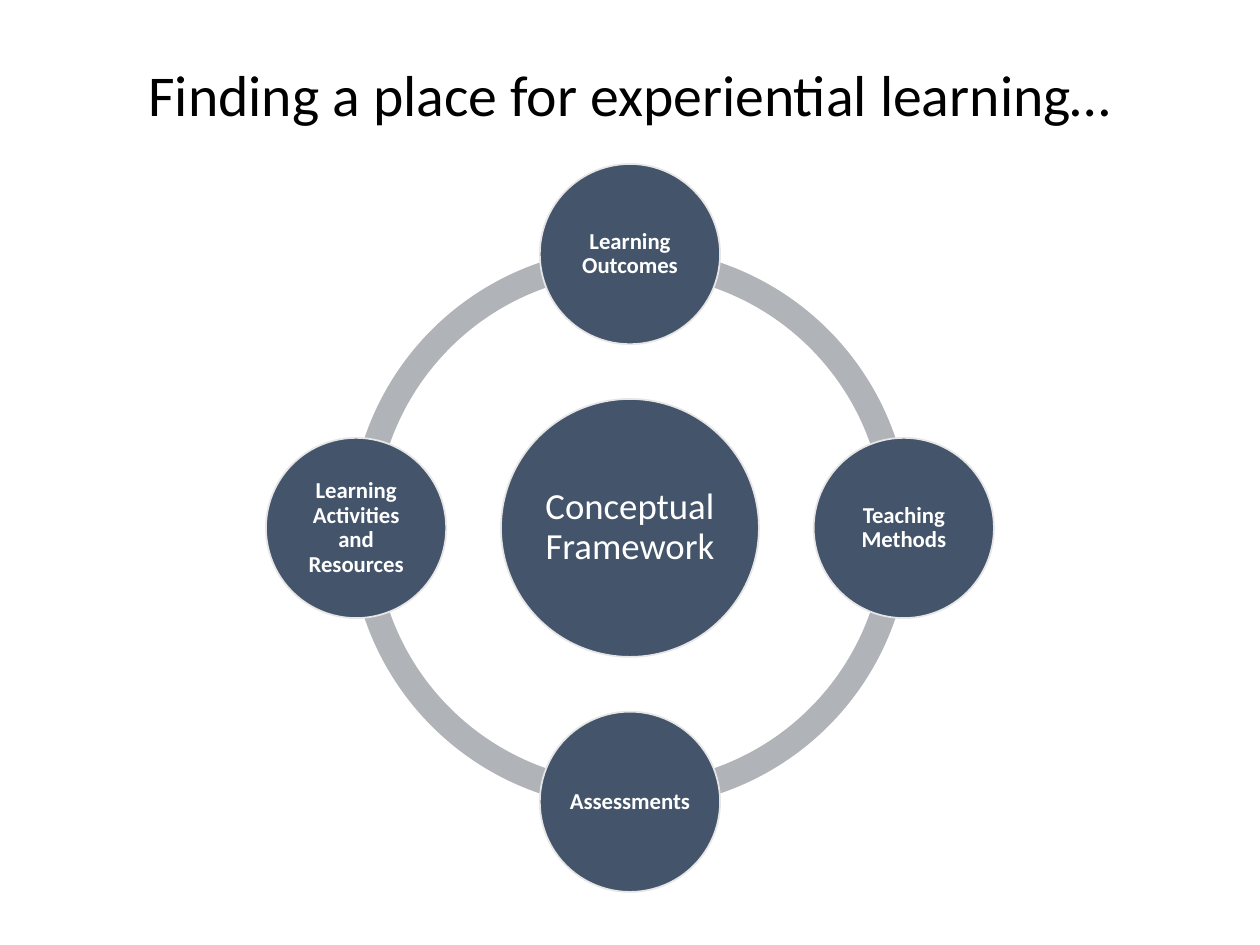
from math import cos, radians, sin

from pptx import Presentation
from pptx.dml.color import RGBColor
from pptx.enum.shapes import MSO_SHAPE
from pptx.enum.text import MSO_ANCHOR, MSO_AUTO_SIZE, PP_ALIGN
from pptx.util import Pt

COLORS = {
    "title": "000000",
    "ring": "B0B4B9",
    "circle": "44546A",
    "outline": "E7E6E6",
    "label": "FFFFFF",
}
FONT = "Calibri"
STEPS = [
    ("Learning Outcomes", -90),
    ("Teaching Methods", 0),
    ("Assessments", 90),
    ("Learning Activities and Resources", 180),
]


def color(name):
    return RGBColor.from_string(COLORS[name])


def write_text(frame, text, size, color_name, bold=False):
    frame.word_wrap = True
    frame.auto_size = MSO_AUTO_SIZE.NONE
    frame.vertical_anchor = MSO_ANCHOR.MIDDLE
    para = frame.paragraphs[0]
    para.alignment = PP_ALIGN.CENTER
    para.line_spacing = 0.9
    span = para.add_run()
    span.text = text
    span.font.name = FONT
    span.font.size = Pt(size)
    span.font.bold = bold
    span.font.color.rgb = color(color_name)


def add_title(page, left, top, width, height):
    title = page.shapes.title
    title.left, title.top = Pt(left), Pt(top)
    title.width, title.height = Pt(width), Pt(height)
    write_text(title.text_frame, "Finding a place for experiential learning…", 33, "title")


def add_centered(group, kind, center_x, center_y, diameter, fill):
    shape = group.shapes.add_shape(
        kind,
        Pt(center_x - diameter / 2),
        Pt(center_y - diameter / 2),
        Pt(diameter),
        Pt(diameter),
    )
    shape.shadow.inherit = False
    shape.fill.solid()
    shape.fill.fore_color.rgb = color(fill)
    return shape


def add_circle(group, center_x, center_y, diameter, text, size, inset, bold=False):
    circle = add_centered(group, MSO_SHAPE.OVAL, center_x, center_y, diameter, "circle")
    circle.line.color.rgb = color("outline")
    circle.line.width = Pt(1)
    frame = circle.text_frame
    frame.margin_left = frame.margin_right = Pt(inset)
    frame.margin_top = frame.margin_bottom = Pt(inset)
    write_text(frame, text, size, "label", bold)


def add_cycle(page, left, top, side):
    group = page.shapes.add_group_shape()
    center_x, center_y = left + side / 2, top + side / 2
    step_size = 103
    orbit = (side - step_size) / 2

    for start, end in [(108, 162), (54, 108), (0, 54), (162, 0)]:
        arc = add_centered(group, MSO_SHAPE.BLOCK_ARC, center_x, center_y, 320.4, "ring")
        arc.line.fill.background()
        arc.adjustments[0] = start
        arc.adjustments[1] = end
        arc.adjustments[2] = 0.046

    add_circle(group, center_x, center_y, 147.4, "Conceptual Framework", 21, 2)
    for text, degrees in STEPS:
        angle = radians(degrees)
        add_circle(
            group,
            center_x + orbit * cos(angle),
            center_y + orbit * sin(angle),
            step_size,
            text,
            13,
            1.3,
            bold=True,
        )


def main():
    deck = Presentation()
    deck.slide_width, deck.slide_height = Pt(720), Pt(540)
    page = deck.slides.add_slide(deck.slide_layouts[5])
    add_title(page, 49.5, 28.8, 621, 54)
    add_cycle(page, 152, 93.7, 416)
    deck.save("out.pptx")


if __name__ == "__main__":
    main()
